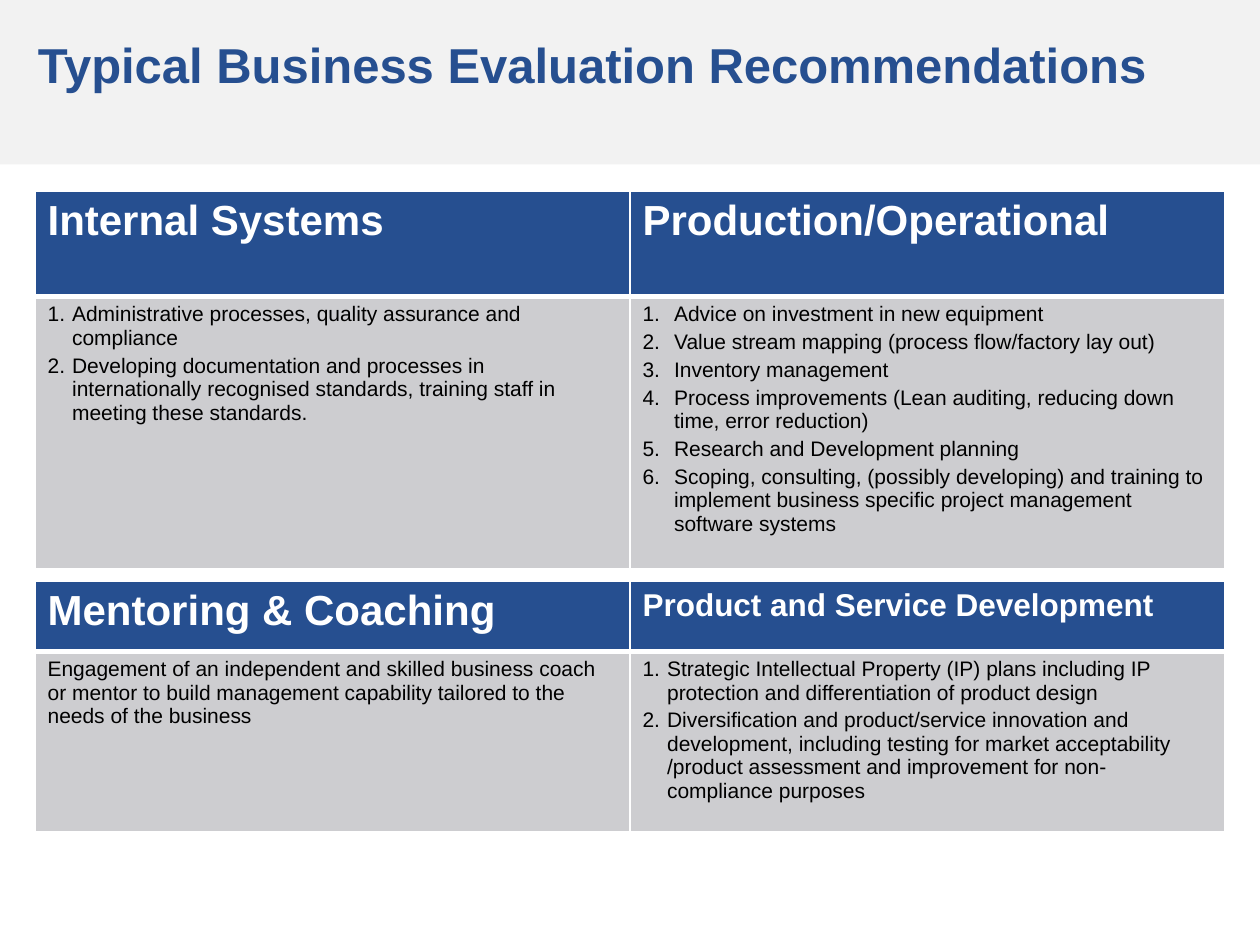
"""Build a slide of business evaluation recommendations in two tables."""
from dataclasses import dataclass

from lxml import etree
from pptx import Presentation
from pptx.dml.color import RGBColor
from pptx.enum import text
from pptx.oxml import ns
from pptx.util import Pt


@dataclass(frozen=True)
class Theme:
    font: str = "Arial"
    blue: str = "264F90"
    band: str = "F2F2F2"
    gray: str = "CDCDD0"
    white: str = "FFFFFF"
    black: str = "000000"
    title: float = 28
    heading: float = 24
    small_heading: float = 18
    body: float = 12
    thin: float = 1
    thick: float = 3


THEME = Theme()
TABLE_LEFT, COLUMN_WIDTH = 20, 340

SYSTEMS = [
    "Administrative processes, quality assurance and compliance",
    "Developing documentation and processes in internationally recognised standards, "
    "training staff in meeting these standards.",
]
OPERATIONS = [
    "Advice on investment in new equipment",
    "Value stream mapping (process flow/factory lay out)",
    "Inventory management",
    "Process improvements (Lean auditing, reducing down time, error reduction)",
    "Research and Development planning",
    "Scoping, consulting, (possibly developing) and training to implement business "
    "specific project management software systems",
]
COACHING = [
    "Engagement of an independent and skilled business coach or mentor to build "
    "management capability tailored to the needs of the business",
]
PRODUCTS = [
    "Strategic Intellectual Property (IP) plans including IP protection and "
    "differentiation of product design",
    "Diversification and product/service innovation and development, including testing "
    "for market acceptability /product assessment and improvement for non-compliance purposes",
]


def paint(fill, color):
    fill.solid()
    fill.fore_color.rgb = RGBColor.from_string(color)


def add_span(para, words, size, color, bold=False):
    span = para.add_run()
    span.text = words
    span.font.name = THEME.font
    span.font.size = Pt(size)
    span.font.bold = bold
    span.font.color.rgb = RGBColor.from_string(color)


def number(para, indent):
    properties = para._p.get_or_add_pPr()
    properties.set("marL", str(Pt(indent)))
    properties.set("indent", str(-Pt(indent)))
    etree.SubElement(properties, ns.qn("a:buAutoNum"), type="arabicPeriod")


def style_cell(cell, color, top, bottom):
    properties = cell._tc.get_or_add_tcPr()
    widths = {"L": THEME.thin, "R": THEME.thin, "T": top, "B": bottom}
    for side, width in widths.items():
        line = etree.SubElement(properties, ns.qn(f"a:ln{side}"), w=str(Pt(width)))
        solid = etree.SubElement(line, ns.qn("a:solidFill"))
        etree.SubElement(solid, ns.qn("a:srgbClr"), val=THEME.white)
    paint(cell.fill, color)


def fill_heading(cell, words, size):
    style_cell(cell, THEME.blue, THEME.thin, THEME.thick)
    add_span(cell.text_frame.paragraphs[0], words, size, THEME.white, True)


def fill_body(cell, items, indent):
    style_cell(cell, THEME.gray, THEME.thick, THEME.thin)
    frame = cell.text_frame
    for index, item in enumerate(items):
        para = frame.add_paragraph() if index else frame.paragraphs[0]
        if index:
            para.space_before = Pt(0.2 * THEME.body)
        if indent:
            number(para, indent)
        add_span(para, item, THEME.body, THEME.black)


def add_topics(page, top, heights, topics):
    frame = page.shapes.add_table(
        2, len(topics), Pt(TABLE_LEFT), Pt(top),
        Pt(COLUMN_WIDTH * len(topics)), Pt(sum(heights)))
    table = frame.table
    table.horz_banding = False
    for row, height in zip(table.rows, heights):
        row.height = Pt(height)
    for index, (heading, size, items, indent) in enumerate(topics):
        table.columns[index].width = Pt(COLUMN_WIDTH)
        fill_heading(table.cell(0, index), heading, size)
        fill_body(table.cell(1, index), items, indent)


def add_title(page, words):
    title = page.shapes.title
    title.left, title.top, title.width, title.height = Pt(0), Pt(-6), Pt(720), Pt(100)
    paint(title.fill, THEME.band)
    frame = title.text_frame
    frame.word_wrap = True
    frame.auto_size = text.MSO_AUTO_SIZE.NONE
    frame.vertical_anchor = text.MSO_ANCHOR.TOP
    frame.margin_left, frame.margin_top = Pt(21.6), Pt(25.5)
    para = frame.paragraphs[0]
    para.alignment = text.PP_ALIGN.LEFT
    para.space_before = Pt(0)
    add_span(para, words, THEME.title, THEME.blue, True)


def main():
    deck = Presentation()
    deck.slide_width, deck.slide_height = Pt(720), Pt(540)
    page = deck.slides.add_slide(deck.slide_layouts[5])
    add_title(page, "Typical Business Evaluation Recommendations")
    add_topics(page, 109.5, (60, 155.5), [
        ("Internal Systems", THEME.heading, SYSTEMS, 14),
        ("Production/Operational", THEME.heading, OPERATIONS, 18),
    ])
    add_topics(page, 332.2, (40, 103), [
        ("Mentoring & Coaching", THEME.heading, COACHING, 0),
        ("Product and Service Development", THEME.small_heading, PRODUCTS, 14),
    ])
    deck.save("out.pptx")


if __name__ == "__main__":
    main()
